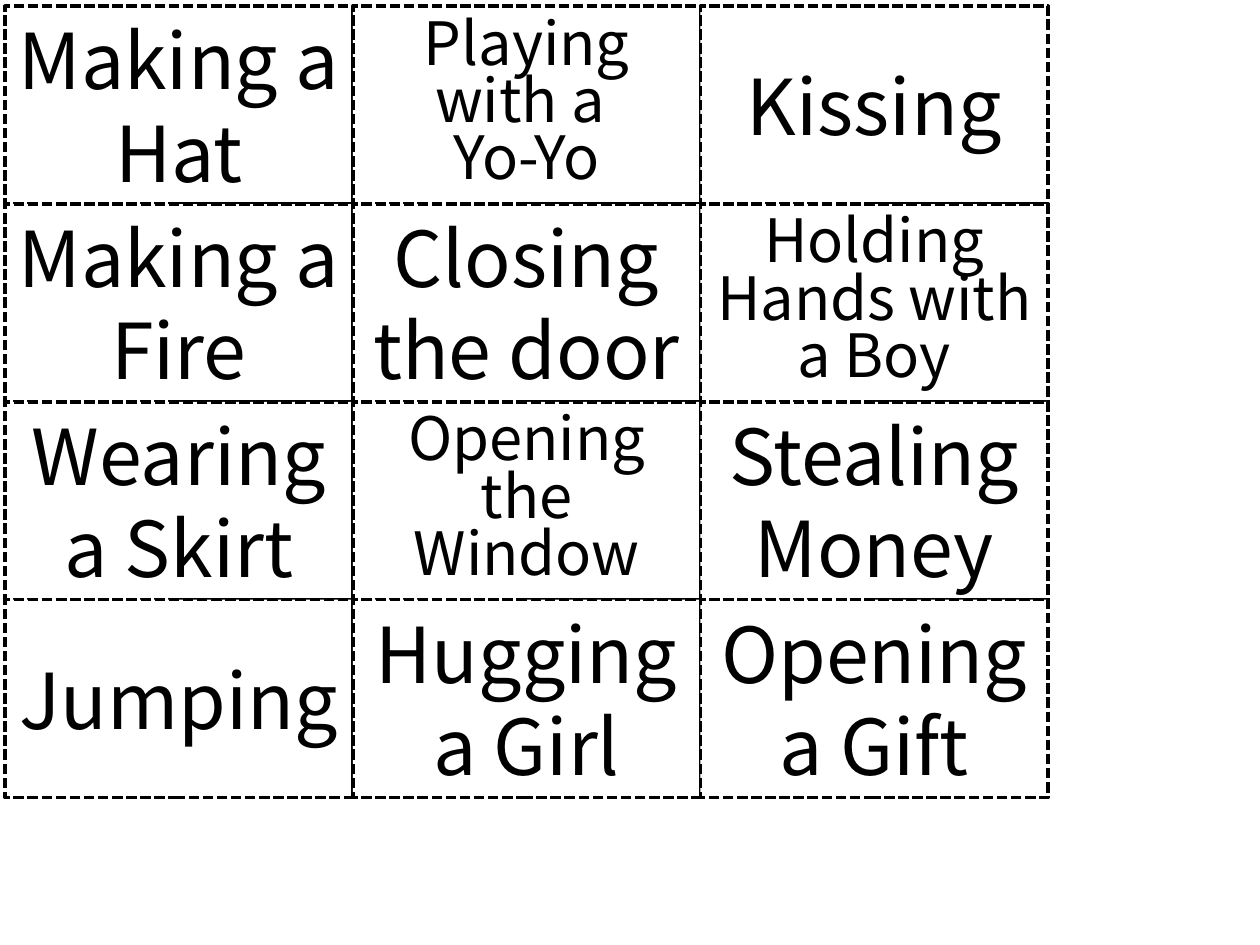
import pptx
import pptx.util
import pptx.dml.color
import pptx.enum.dml
import pptx.enum.shapes
import pptx.enum.text

ACTIVITIES = [
    [["Making a Hat"], ["Playing with a ", "Yo-Yo"], ["Kissing"]],
    [["Making a Fire"], ["Closing the door"], ["Holding Hands with a Boy"]],
    [["Wearing a Skirt"], ["Opening the Window"], ["Stealing Money"]],
    [["Jumping "], ["Hugging a Girl"], ["Opening a Gift"]],
]
LONG_ACTIVITY = 17


def color(value):
    return pptx.dml.color.RGBColor.from_string(value)


class CardSheet:
    """Holds the card style and the slide on which the cards are laid."""

    font = "Noto Sans CJK KR"
    ink = "000000"
    paper = "FFFFFF"
    left, top = 0.04, 0.05
    card_width, card_height = 2.76, 1.57

    def __init__(self, slide):
        self.slide = slide

    def card(self, column, row, lines):
        card = self.slide.shapes.add_shape(
            pptx.enum.shapes.MSO_SHAPE.RECTANGLE,
            pptx.util.Inches(self.left + column * self.card_width),
            pptx.util.Inches(self.top + row * self.card_height),
            pptx.util.Inches(self.card_width),
            pptx.util.Inches(self.card_height))
        card.shadow.inherit = False
        card.fill.solid()
        card.fill.fore_color.rgb = color(self.paper)
        card.line.color.rgb = color(self.ink)
        card.line.width = pptx.util.Pt(2)
        card.line.dash_style = pptx.enum.dml.MSO_LINE.SQUARE_DOT
        self.label(card.text_frame, lines)

    def label(self, frame, lines):
        frame.word_wrap = True
        frame.vertical_anchor = pptx.enum.text.MSO_ANCHOR.MIDDLE
        is_long = len("".join(lines)) > LONG_ACTIVITY
        for index, line in enumerate(lines):
            paragraph = frame.add_paragraph() if index else frame.paragraphs[0]
            paragraph.alignment = pptx.enum.text.PP_ALIGN.CENTER
            if is_long:
                paragraph.line_spacing = 0.8
            words = paragraph.add_run()
            words.text = line
            words.font.name = self.font
            words.font.size = pptx.util.Pt(34.1 if is_long else 44)
            words.font.color.rgb = color(self.ink)


def main():
    deck = pptx.Presentation()
    deck.slide_width = pptx.util.Inches(10)
    deck.slide_height = pptx.util.Inches(7.5)
    sheet = CardSheet(deck.slides.add_slide(deck.slide_layouts[6]))
    for row, activities in enumerate(ACTIVITIES):
        for column, lines in enumerate(activities):
            sheet.card(column, row, lines)
    deck.save("out.pptx")


if __name__ == "__main__":
    main()
